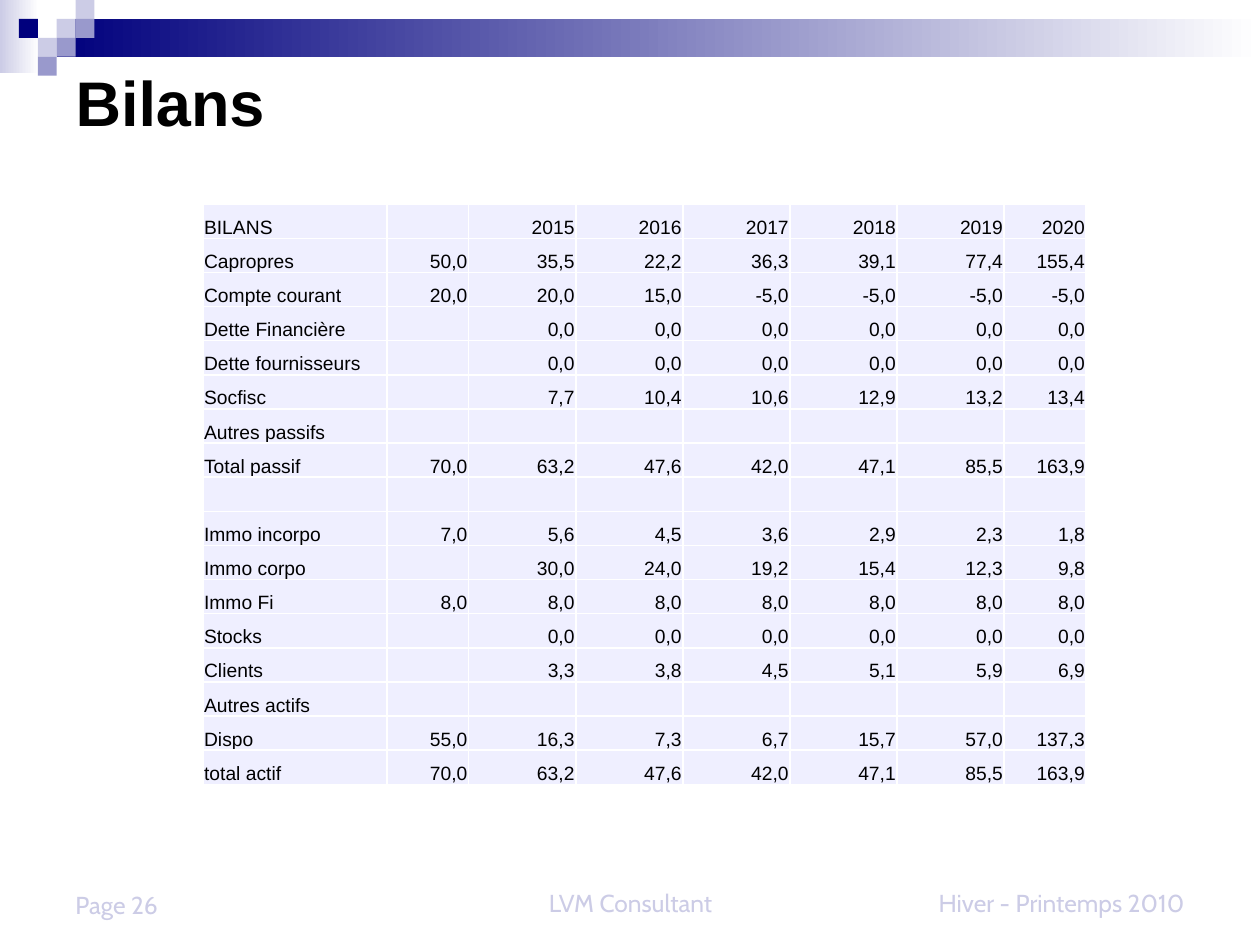
from lxml import etree
from pptx import Presentation, util as u
from pptx.dml import color
from pptx.enum import shapes, text
from pptx.oxml import ns

ROWS = """BILANS||2015|2016|2017|2018|2019|2020
Capropres|50,0|35,5|22,2|36,3|39,1|77,4|155,4
Compte courant|20,0|20,0|15,0|-5,0|-5,0|-5,0|-5,0
Dette Financière||0,0|0,0|0,0|0,0|0,0|0,0
Dette fournisseurs||0,0|0,0|0,0|0,0|0,0|0,0
Socfisc||7,7|10,4|10,6|12,9|13,2|13,4
Autres passifs|||||||
Total passif|70,0|63,2|47,6|42,0|47,1|85,5|163,9
|||||||
Immo incorpo|7,0|5,6|4,5|3,6|2,9|2,3|1,8
Immo corpo||30,0|24,0|19,2|15,4|12,3|9,8
Immo Fi|8,0|8,0|8,0|8,0|8,0|8,0|8,0
Stocks||0,0|0,0|0,0|0,0|0,0|0,0
Clients||3,3|3,8|4,5|5,1|5,9|6,9
Autres actifs|||||||
Dispo|55,0|16,3|7,3|6,7|15,7|57,0|137,3
total actif|70,0|63,2|47,6|42,0|47,1|85,5|163,9"""

NAVY, LILAC, VIOLET, PALE, WHITE, BLACK = "00007D", "CCCCE6", "9999CC", "EFEFFF", "FFFFFF", "000000"
LEFT, CENTER, RIGHT = text.PP_ALIGN.LEFT, text.PP_ALIGN.CENTER, text.PP_ALIGN.RIGHT
BOTTOM, MIDDLE = text.MSO_ANCHOR.BOTTOM, text.MSO_ANCHOR.MIDDLE


def rgb(value):
    return color.RGBColor.from_string(value)


class BalanceSlide:
    """Draws one slide on a grid of 100 columns by 75 rows."""

    def __init__(self, presentation):
        self.unit = presentation.slide_width / 100
        self.slide = presentation.slides.add_slide(presentation.slide_layouts[5])

    def span(self, *cells):
        return [u.Emu(round(cell * self.unit)) for cell in cells]

    def set_text(self, paragraph, words, size, font, shade, align, bold=False):
        paragraph.text = words
        paragraph.alignment = align
        for run in paragraph.runs:
            run.font.size, run.font.name, run.font.bold = u.Pt(size), font, bold
            run.font.color.rgb = rgb(shade)

    def title(self, words, *frame):
        title = self.slide.shapes.title
        title.left, title.top, title.width, title.height = self.span(*frame)
        title.text_frame.vertical_anchor = MIDDLE
        title.text_frame.auto_size = text.MSO_AUTO_SIZE.NONE
        self.set_text(title.text_frame.paragraphs[0], words, 36, "Arial", BLACK, LEFT, True)

    def block(self, frame, *shades):
        block = self.slide.shapes.add_shape(shapes.MSO_SHAPE.RECTANGLE, *self.span(*frame))
        block.shadow.inherit = False
        block.line.fill.background()
        if len(shades) == 1:
            block.fill.solid()
            block.fill.fore_color.rgb = rgb(shades[0])
        else:
            block.fill.gradient()
            block.fill.gradient_angle = 0
            for stop, shade in zip(block.fill.gradient_stops, shades):
                stop.color.rgb = rgb(shade)

    def footer(self, words, frame, align):
        text_frame = self.slide.shapes.add_textbox(*self.span(*frame)).text_frame
        text_frame.word_wrap = True
        text_frame.vertical_anchor = BOTTOM
        self.set_text(text_frame.paragraphs[0], words, 14, "Cabin", LILAC, align)

    def cell(self, cell, words, align):
        cell.margin_left, cell.margin_top, cell.margin_right, cell.margin_bottom = self.span(0.1, 0.1, 0.1, 0)
        cell.vertical_anchor = BOTTOM
        paragraph = cell.text_frame.paragraphs[0]
        self.set_text(paragraph, words, 11, "Arial", BLACK, align)
        if not words:
            etree.SubElement(paragraph._p, ns.qn("a:endParaRPr"), sz="1100")
        properties = cell._tc.get_or_add_tcPr()
        for side in ("lnL", "lnR", "lnT", "lnB"):
            line = etree.SubElement(properties, ns.qn(f"a:{side}"), w=str(u.Pt(1)))
            fill = etree.SubElement(line, ns.qn("a:solidFill"))
            etree.SubElement(fill, ns.qn("a:srgbClr"), val=WHITE)
        cell.fill.solid()
        cell.fill.fore_color.rgb = rgb(PALE)

    def table(self, rows, left, top, widths, height):
        frame = self.span(left, top, sum(widths), height)
        table = self.slide.shapes.add_table(len(rows), len(widths), *frame).table
        table.first_row = table.horz_banding = False
        for column, width in zip(table.columns, self.span(*widths)):
            column.width = width
        for row, values in zip(table.rows, rows):
            row.height = self.span(height / len(rows))[0]
            for index, (cell, words) in enumerate(zip(row.cells, values)):
                self.cell(cell, words, RIGHT if index else LEFT)


def main():
    presentation = Presentation()
    presentation.slide_width, presentation.slide_height = u.Inches(10), u.Inches(7.5)
    slide = BalanceSlide(presentation)
    slide.block((0, 0, 3.1, 5.8), LILAC, WHITE)
    slide.block((4.5, 1.5, 95.5, 3), NAVY, WHITE)
    square = 1.5
    mosaic = [(3, 1, LILAC), (4, 0, LILAC), (4, 1, VIOLET), (2, 2, LILAC),
              (1, 1, NAVY), (3, 2, VIOLET), (2, 3, VIOLET)]
    for column, row, shade in mosaic:
        slide.block((column * square, row * square, square, square), shade)
    slide.footer("LVM Consultant", (34.2, 68.3, 31.7, 5), CENTER)
    slide.footer("Hiver - Printemps 2010", (71.7, 68.3, 23.3, 5), RIGHT)
    slide.footer("Page 26", (5, 68.3, 23.3, 5.2), LEFT)
    slide.title("Bilans", 5, 0.5, 90, 15)
    rows = [line.split("|") for line in ROWS.splitlines()]
    slide.table(rows, 16.1, 16.2, [14.6, 6.5] + [8.5] * 5 + [6.5], 46.1)
    presentation.save("out.pptx")


if __name__ == "__main__":
    main()
